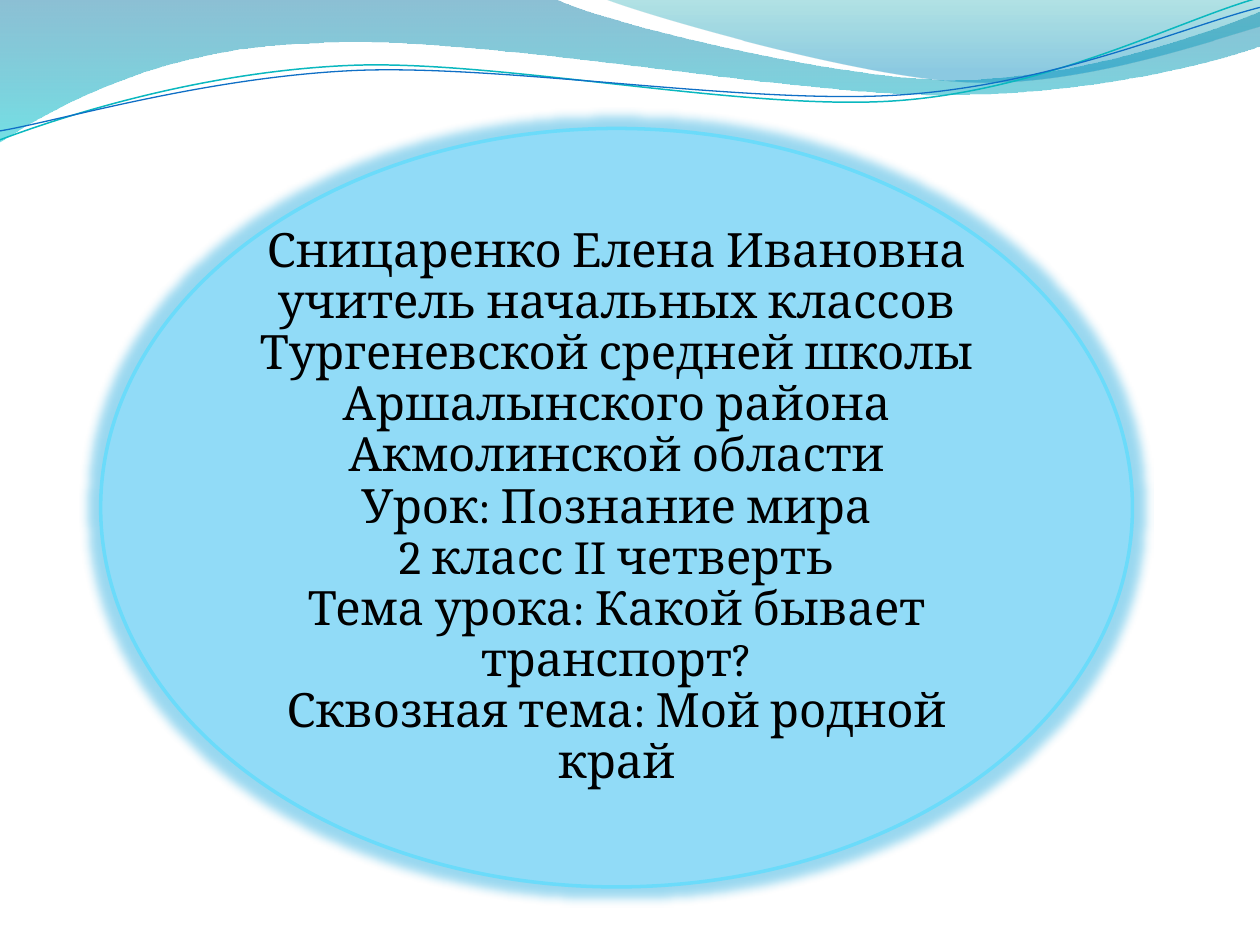
from copy import deepcopy

from lxml.etree import SubElement
from pptx import Presentation
from pptx.dml.color import RGBColor
from pptx.enum.shapes import MSO_SHAPE as Shape
from pptx.enum.text import MSO_ANCHOR as Anchor, MSO_AUTO_SIZE as AutoSize, PP_ALIGN as Align
from pptx.oxml.ns import qn
from pptx.oxml.xmlchemy import OxmlElement
from pptx.util import Cm, Pt

LINES = [
    "Сницаренко Елена Ивановна",
    "учитель начальных классов",
    "Тургеневской средней школы",
    "Аршалынского района",
    "Акмолинской области",
    "Урок: Познание мира",
    "2 класс II четверть",
    "Тема урока: Какой бывает транспорт?",
    "Сквозная тема: Мой родной край",
]

# Outlines: start point, then a corner (one point) or a curve (three points), in cm.
WIDE_WAVE = [
    [(0, 0)],
    [(11.18, -0.03)],
    [(12.09, 0.43), (16.87, 1.6), (19.25, 1.6)],
    [(21.67, 1.6), (24.33, 0.66), (25.4, 0.23)],
    [(25.43, 0.91)],
    [(24.97, 1.12), (22.1, 1.93), (18.95, 1.91)],
    [(15.8, 1.91), (9.7, 0.71), (6.53, 0.86)],
    [(3.28, 0.91), (1.17, 2.11), (-0.03, 2.87)],
]
RIGHT_WAVE = [
    [(12.17, -0.03)],
    [(12.93, 0.28), (17.32, 1.57), (19.53, 1.65)],
    [(21.74, 1.75), (24.41, 0.81), (25.4, 0.53)],
    [(25.4, 0)],
]
TEAL_CURVE = [
    [(0, 2.82)],
    [(1.22, 2.36), (4.01, 1.45), (7.04, 1.32)],
    [(10.03, 1.19), (15.06, 2.26), (18.11, 2.03)],
    [(21.16, 1.8), (23.83, 0.38), (25.4, -0.05)],
]
BLUE_CURVE = [
    [(0, 2.64)],
    [(1.19, 2.44), (4.17, 1.55), (7.19, 1.42)],
    [(10.24, 1.3), (15.16, 2.13), (18.21, 1.91)],
    [(21.23, 1.7), (23.9, 0.53), (25.4, 0.15)],
]


def color(value):
    return RGBColor.from_string(value)


def add_color(parent, value, opacity):
    """Append a colour with an opacity in percent."""
    node = SubElement(parent, qn("a:srgbClr"), val=value)
    SubElement(node, qn("a:alpha"), val=str(opacity * 1000))


def add_outline(page, box, steps, closed):
    """Draw a freeform whose three-point steps are Bézier curves."""
    left, top = box[:2]
    points = [(Cm(left + x), Cm(top + y)) for step in steps for x, y in step]
    builder = page.shapes.build_freeform(*points[0], scale=1.0)
    builder.add_line_segments(points[1:], close=closed)
    shape = builder.convert_to_shape()
    shape.shadow.inherit = False
    segments = iter(list(shape._element.iter(qn("a:lnTo"))))
    for step in steps[1:]:
        nodes = [next(segments) for _ in step]
        if len(step) == 3:
            curve = OxmlElement("a:cubicBezTo")
            nodes[0].addprevious(curve)
            for node in nodes:
                curve.append(node[0])
                node.getparent().remove(node)
    return shape


def add_wave(page, box, steps, stops):
    shape = add_outline(page, box, steps, True)
    shape.line.fill.background()
    shape.fill.gradient()
    gradient = shape._element.spPr.find(qn("a:gradFill"))
    for child in list(gradient):
        gradient.remove(child)
    stop_list = SubElement(gradient, qn("a:gsLst"))
    for position, value, opacity in stops:
        stop = SubElement(stop_list, qn("a:gs"), pos=str(position * 1000))
        add_color(stop, value, opacity)
    SubElement(gradient, qn("a:lin"), ang="5400000", scaled="0")


def add_curve(page, box, steps, value, width):
    shape = add_outline(page, box, steps, False)
    shape.fill.background()
    shape.line.color.rgb = color(value)
    shape.line.width = Pt(width)


def add_header(page, box):
    add_wave(page, box, WIDE_WAVE, [(0, "0074A1", 45), (100, "00C6CF", 55)])
    add_wave(page, box, RIGHT_WAVE, [(0, "00A1A9", 30), (80, "008BBF", 45)])
    add_curve(page, box, TEAL_CURVE, "0AB8BF", 0.85)
    add_curve(page, box, BLUE_CURVE, "0F6FC6", 0.75)


def add_glowing_ellipse(page, box):
    ellipse = page.shapes.add_shape(Shape.OVAL, *map(Cm, box))
    ellipse.shadow.inherit = False
    ellipse.fill.solid()
    ellipse.fill.fore_color.rgb = color("8ADFFF")
    properties = ellipse._element.spPr
    fill_color = properties.find(qn("a:solidFill"))[0]
    SubElement(fill_color, qn("a:alpha"), val="50000")
    ellipse.line.color.rgb = color("6BDBFA")
    ellipse.line.width = Pt(2)
    effects = properties.find(qn("a:effectLst"))
    glow = SubElement(effects, qn("a:glow"), rad=str(Pt(11)))
    add_color(glow, "009DD9", 40)


def place_title(page, box):
    title = page.shapes.title
    page.shapes._spTree.append(title._element)  # in front of the ellipse
    left, top, width, height = box
    inset_x, inset_y = 3.05, 2.24
    title.left, title.top = Cm(left + inset_x), Cm(top + inset_y)
    title.width, title.height = Cm(width - 2 * inset_x), Cm(height - 2 * inset_y)
    frame = title.text_frame
    frame_format = {
        "word_wrap": True, "auto_size": AutoSize.NONE, "vertical_anchor": Anchor.MIDDLE,
        "margin_left": 0, "margin_right": 0, "margin_top": 0, "margin_bottom": 0,
    }
    for name, value in frame_format.items():
        setattr(frame, name, value)
    para = frame.paragraphs[0]
    para.text = "\v".join(LINES)
    para.alignment = Align.CENTER
    para.line_spacing = 0.9
    for span in para.runs:
        for name, value in {"size": Pt(27), "name": "Cambria"}.items():
            setattr(span.font, name, value)
        span.font.color.rgb = color("000000")
    for line_break in para._p.findall(qn("a:br")):
        line_break.append(deepcopy(para.runs[0]._r.rPr))


def main():
    deck = Presentation()
    deck.slide_width, deck.slide_height = Cm(25.4), Cm(19.05)
    page = deck.slides.add_slide(deck.slide_layouts[5])
    ellipse_box = (2.03, 2.59, 20.8, 15.29)
    add_header(page, (0, 0, 25.4, 2.87))
    add_glowing_ellipse(page, ellipse_box)
    place_title(page, ellipse_box)
    deck.save("out.pptx")


if __name__ == "__main__":
    main()
